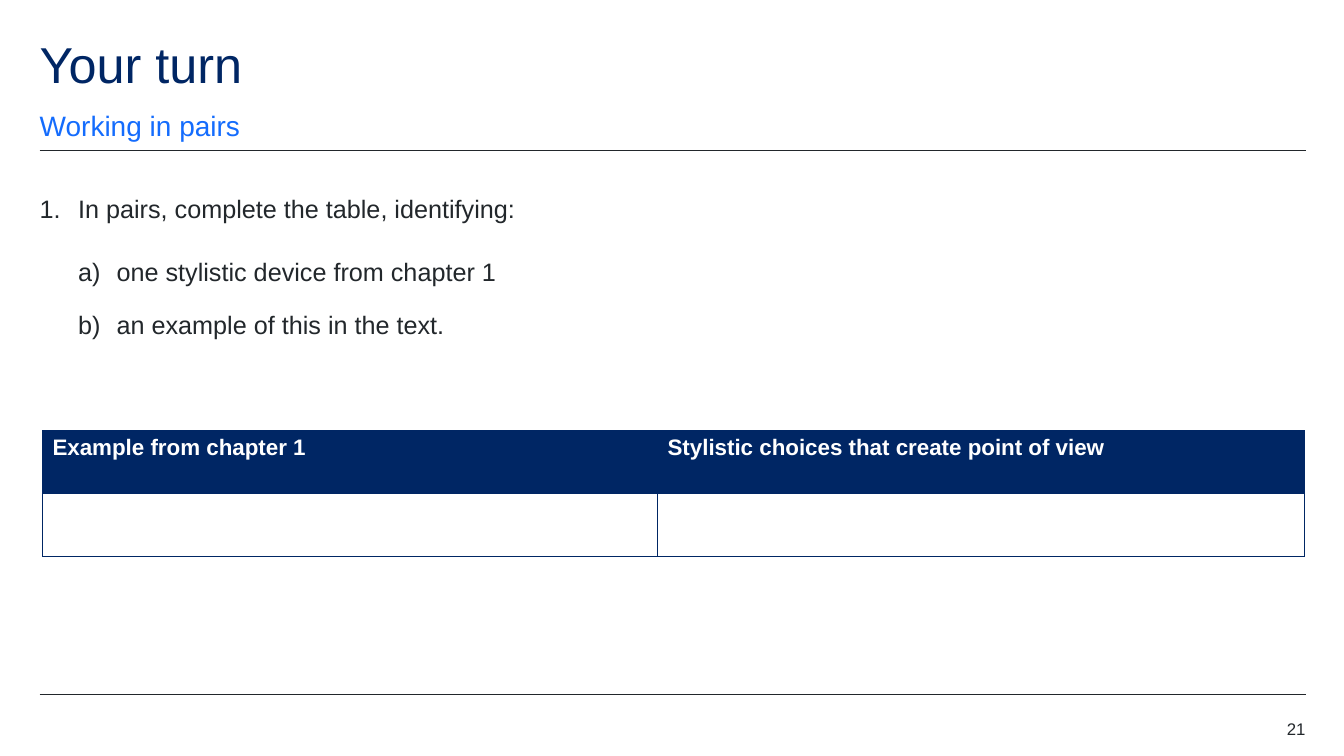
from dataclasses import dataclass

from lxml import etree
from pptx import Presentation
from pptx import util as u
from pptx.dml import color
from pptx.enum import shapes, text
from pptx.oxml import ns


@dataclass(frozen=True)
class Theme:
    font: str = "Arial"
    navy: str = "002664"
    blue: str = "146CFD"
    ink: str = "22272B"
    white: str = "FFFFFF"
    title: int = 36
    subtitle: int = 20
    body: int = 18
    table: int = 16
    number: int = 12
    line: float = 0.5


@dataclass(frozen=True)
class Para:
    text: str
    size: int
    color: str
    spacing: float = 1.0
    after: int = 0
    numbering: str = ""
    level: int = 0
    align: text.PP_ALIGN = text.PP_ALIGN.LEFT


@dataclass(frozen=True)
class Box:
    x: float
    y: float
    w: float
    h: float
    paras: tuple[Para, ...]
    anchor: text.MSO_ANCHOR = text.MSO_ANCHOR.TOP


T = Theme()
LEFT, RIGHT = 1.0, 32.9
HANG = 0.97  # hanging indent of each list level

BOXES = (
    Box(LEFT, 1.0, 28, 1.52, (Para("Your turn", T.title, T.navy, 0.9),)),
    Box(LEFT, 2.72, 28, 0.86,
        (Para("Working in pairs", T.subtitle, T.blue, 1.5, 12),),
        text.MSO_ANCHOR.BOTTOM),
    Box(LEFT, 4.5, RIGHT - LEFT, 4.75, (
        Para("In pairs, complete the table, identifying:",
             T.body, T.ink, 1.5, 12, "arabicPeriod"),
        Para("one stylistic device from chapter 1",
             T.body, T.ink, 1.5, 6, "alphaLcParenR", 1),
        Para("an example of this in the text.",
             T.body, T.ink, 1.5, 6, "alphaLcParenR", 1))),
    Box(RIGHT - 2, 18.11, 2, 0.51,
        (Para("21", T.number, T.ink, align=text.PP_ALIGN.RIGHT),)),
)
RULES = (3.8, 17.5)
HEADERS = ("Example from chapter 1", "Stylistic choices that create point of view")
COLUMNS = (15.5, 16.3)
ROW_HEIGHT = 1.59


def rgb(value: str) -> color.RGBColor:
    return color.RGBColor.from_string(value)


def add_run(p, content: str, size: int, ink: str, bold: bool = False) -> None:
    r = p.add_run()
    r.text = content
    r.font.name, r.font.size, r.font.bold = T.font, u.Pt(size), bold
    r.font.color.rgb = rgb(ink)


def add_para(p, para: Para) -> None:
    if para.numbering:
        pPr = p._p.get_or_add_pPr()
        pPr.set("marL", str(u.Cm(HANG * (para.level + 1))))
        pPr.set("indent", str(-u.Cm(HANG)))
        etree.SubElement(pPr, ns.qn("a:buFont"), typeface="+mj-lt")
        etree.SubElement(pPr, ns.qn("a:buAutoNum"), type=para.numbering)
    p.level, p.alignment = para.level, para.align
    p.line_spacing, p.space_after = para.spacing, u.Pt(para.after)
    add_run(p, para.text, para.size, para.color)


def add_box(s, box: Box) -> None:
    sp = s.shapes.add_textbox(u.Cm(box.x), u.Cm(box.y), u.Cm(box.w), u.Cm(box.h))
    tf = sp.text_frame
    tf.word_wrap, tf.vertical_anchor = True, box.anchor
    tf.margin_left = tf.margin_right = tf.margin_top = tf.margin_bottom = 0
    for i, para in enumerate(box.paras):
        add_para(tf.add_paragraph() if i else tf.paragraphs[0], para)


def add_rule(s, y: float) -> None:
    ln = s.shapes.add_connector(shapes.MSO_CONNECTOR.STRAIGHT,
                                u.Cm(LEFT), u.Cm(y), u.Cm(RIGHT), u.Cm(y))
    ln.line.color.rgb, ln.line.width = rgb(T.ink), u.Pt(T.line)
    etree.SubElement(ln._element.spPr, ns.qn("a:effectLst"))


def add_borders(cell) -> None:
    tcPr = cell._tc.get_or_add_tcPr()
    for side in ("lnL", "lnR", "lnT", "lnB"):
        ln = etree.SubElement(tcPr, ns.qn(f"a:{side}"), w=str(u.Pt(T.line)))
        fill = etree.SubElement(ln, ns.qn("a:solidFill"))
        etree.SubElement(fill, ns.qn("a:srgbClr"), val=T.navy)


def add_answer_table(s) -> None:
    table = s.shapes.add_table(2, len(COLUMNS), u.Cm(1.07), u.Cm(10.85),
                               u.Cm(sum(COLUMNS)), u.Cm(2 * ROW_HEIGHT)).table
    table.horz_banding = False
    for row in table.rows:
        row.height = u.Cm(ROW_HEIGHT)
    for i, (header, width) in enumerate(zip(HEADERS, COLUMNS)):
        table.columns[i].width = u.Cm(width)
        head, answer = table.cell(0, i), table.cell(1, i)
        add_borders(head)
        add_borders(answer)
        head.fill.solid()
        head.fill.fore_color.rgb = rgb(T.navy)
        answer.fill.background()
        add_run(head.text_frame.paragraphs[0], header, T.table, T.white, True)


def main() -> None:
    prs = Presentation()
    prs.slide_width, prs.slide_height = u.Cm(33.87), u.Cm(19.05)
    s = prs.slides.add_slide(prs.slide_layouts[6])

    # Rules above and below the content
    for y in RULES:
        add_rule(s, y)

    # Headings, task list and page number
    for box in BOXES:
        add_box(s, box)

    # Table for the answers
    add_answer_table(s)

    prs.save("out.pptx")


if __name__ == "__main__":
    main()
